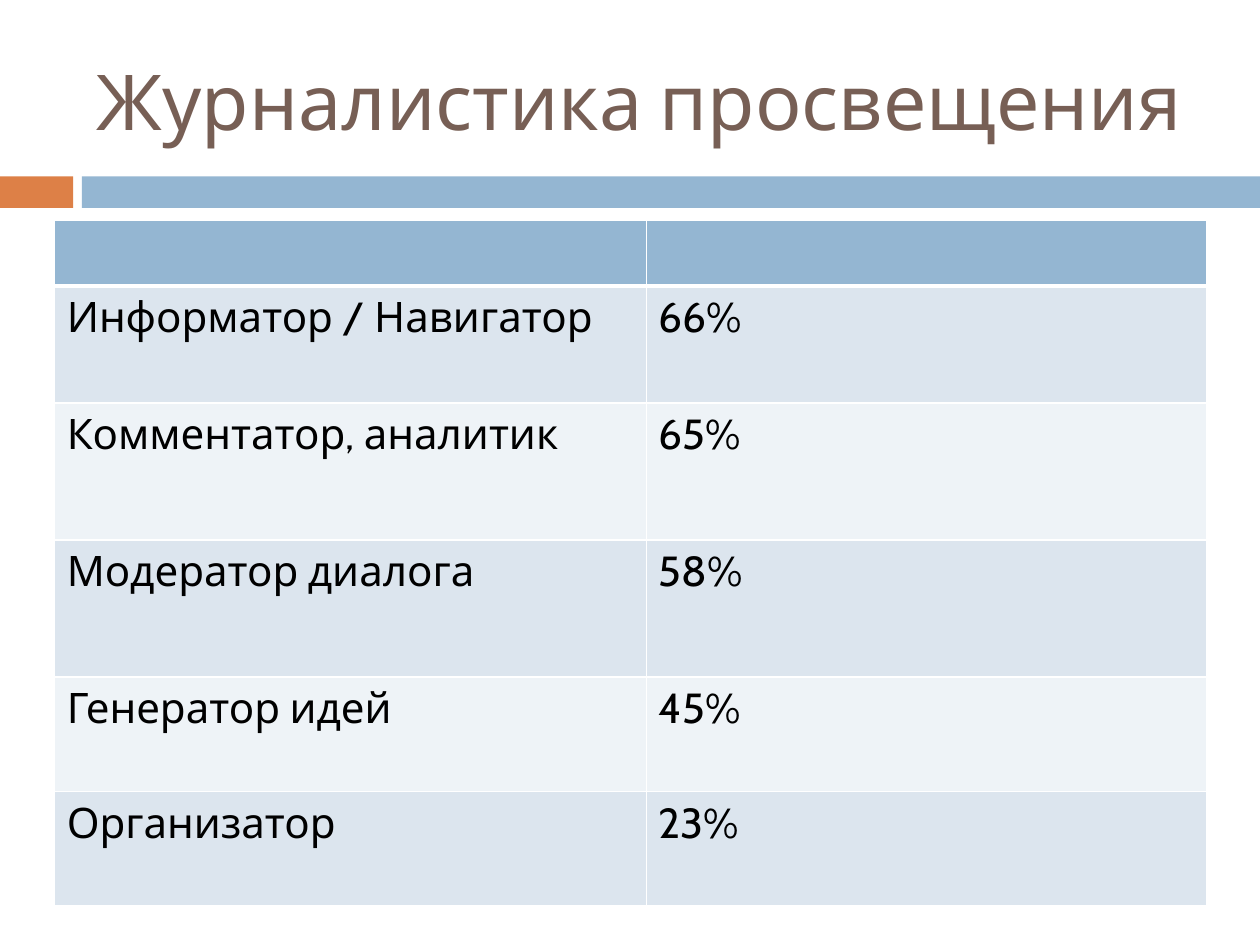
from lxml.etree import SubElement as Sub
from pptx import Presentation
from pptx.dml.color import RGBColor as Rgb
from pptx.enum.shapes import MSO_SHAPE as Shape
from pptx.enum.text import MSO_ANCHOR as Anchor
from pptx.oxml.ns import qn
from pptx.util import Inches, Pt

FONT = "Cabin"
COLORS = {
    "orange": "DD8047",
    "blue": "94B6D2",
    "brown": "775F55",
    "black": "000000",
    "white": "FFFFFF",
    "dark": "DCE5EE",
    "light": "EEF3F7",
}
ROLES = [
    ("Информатор / Навигатор", "66%"),
    ("Комментатор, аналитик", "65%"),
    ("Модератор диалога", "58%"),
    ("Генератор идей", "45%"),
    ("Организатор", "23%"),
]
COLS = [4.7, 4.45]
ROWS = [0.52, 0.93, 1.09, 1.09, 0.91, 0.91]


def paint(fill, color):
    fill.solid()
    fill.fore_color.rgb = Rgb.from_string(COLORS[color])


def write(frame, text, size=24, color="black", anchor=Anchor.TOP):
    frame.word_wrap = True
    frame.vertical_anchor = anchor
    run = frame.paragraphs[0].add_run()
    run.text = text
    run.font.size = Pt(size)
    run.font.name = FONT
    run.font.color.rgb = Rgb.from_string(COLORS[color])


def add_bar(slide, left, top, width, height, color):
    bar = slide.shapes.add_shape(
        Shape.RECTANGLE, Inches(left), Inches(top), Inches(width), Inches(height)
    )
    bar.shadow.inherit = False
    paint(bar.fill, color)
    bar.line.fill.background()


def add_band(slide, left, top, width, height):
    tab, gap = 0.58, 0.07
    add_bar(slide, left, top, tab, height, "orange")
    add_bar(slide, left + tab + gap, top, width - tab - gap, height, "blue")


def add_title(slide, left, top, width, height):
    box = slide.shapes.add_textbox(
        Inches(left), Inches(top), Inches(width), Inches(height)
    )
    write(box.text_frame, "Журналистика просвещения", size=44, color="brown",
          anchor=Anchor.MIDDLE)


def add_edges(cell, **widths):
    props = cell._tc.get_or_add_tcPr()
    for side in "LRTB":
        line = Sub(props, qn(f"a:ln{side}"), w=str(Pt(widths.get(side, 1))))
        fill = Sub(line, qn("a:solidFill"))
        Sub(fill, qn("a:srgbClr"), val=COLORS["white"])


def add_roles(slide, left, top, width, height):
    table = slide.shapes.add_table(
        len(ROWS), len(COLS), Inches(left), Inches(top), Inches(width), Inches(height)
    ).table
    for col, size in zip(table.columns, COLS):
        col.width = Inches(size * width / sum(COLS))
    for row, size in zip(table.rows, ROWS):
        row.height = Inches(size * height / sum(ROWS))
    for cell in table.rows[0].cells:
        add_edges(cell, B=3)
        paint(cell.fill, "blue")
    for num, role in enumerate(ROLES, 1):
        for cell, text in zip(table.rows[num].cells, role):
            add_edges(cell, T=3 if num == 1 else 1)
            paint(cell.fill, "dark" if num % 2 else "light")
            write(cell.text_frame, text)


def main():
    deck = Presentation()
    deck.slide_width, deck.slide_height = Inches(10), Inches(7.5)
    slide = deck.slides.add_slide(deck.slide_layouts[6])
    add_band(slide, 0, 1.4, 10, 0.25)
    add_title(slide, 0.67, 0.25, 8.92, 1.08)
    add_roles(slide, 0.43, 1.75, 9.15, 5.44)
    deck.save("out.pptx")


if __name__ == "__main__":
    main()
